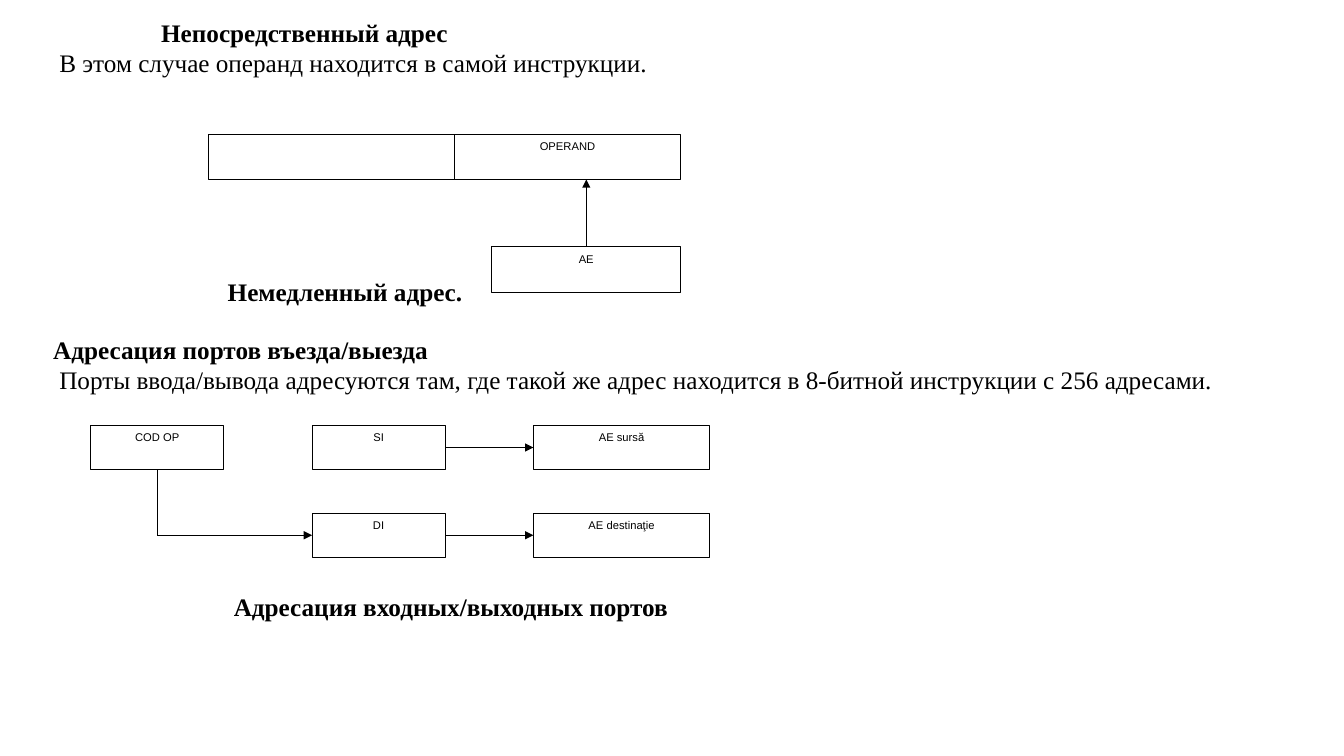
import pptx
import pptx.util
import pptx.dml.color
import pptx.enum.shapes
import pptx.enum.text
import pptx.oxml
import pptx.oxml.ns

Inches = pptx.util.Inches
ALIGN = pptx.enum.text.PP_ALIGN
BLACK = "000000"
WHITE = "FFFFFF"


def color(value):
    return pptx.dml.color.RGBColor.from_string(value)


def format_paragraph(para, size, font, bold, align):
    para.alignment = align
    for span in para.runs:
        span.font.size = pptx.util.Pt(size)
        span.font.name = font
        span.font.bold = bold
        span.font.color.rgb = color(BLACK)


def add_text(page, left, top, width, height, lines, wrap=True):
    box = page.shapes.add_textbox(Inches(left), Inches(top), Inches(width), Inches(height))
    frame = box.text_frame
    frame.word_wrap = wrap
    frame.auto_size = pptx.enum.text.MSO_AUTO_SIZE.SHAPE_TO_FIT_TEXT
    frame.text = "\n".join(text for text, bold, margin, indent in lines)
    for para, (text, bold, margin, indent) in zip(frame.paragraphs, lines):
        properties = para._p.get_or_add_pPr()
        properties.set("marL", str(Inches(margin)))
        properties.set("indent", str(Inches(indent)))
        format_paragraph(para, 18, "Times New Roman", bold, ALIGN.JUSTIFY if wrap else ALIGN.LEFT)


def add_cell(page, left, top, width, height, label=""):
    cell = page.shapes.add_shape(pptx.enum.shapes.MSO_SHAPE.RECTANGLE,
                                 Inches(left), Inches(top), Inches(width), Inches(height))
    cell.shadow.inherit = False
    cell.fill.solid()
    cell.fill.fore_color.rgb = color(WHITE)
    cell.line.color.rgb = color(BLACK)
    cell.line.width = pptx.util.Pt(0.75)
    cell.text_frame.vertical_anchor = pptx.enum.text.MSO_ANCHOR.TOP
    cell.text_frame.text = label
    format_paragraph(cell.text_frame.paragraphs[0], 8, "Arial", False, ALIGN.CENTER)
    return cell


def add_line(page, start, end, source=None, target=None, arrow=True):
    line = page.shapes.add_connector(pptx.enum.shapes.MSO_CONNECTOR.STRAIGHT,
                                     *(Inches(value) for value in start + end))
    if source:
        line.begin_connect(*source)
    if target:
        line.end_connect(*target)
    line.line.color.rgb = color(BLACK)
    line.line.width = pptx.util.Pt(0.75)
    if arrow:
        tail = pptx.oxml.parse_xml(f'<a:tailEnd {pptx.oxml.ns.nsdecls("a")} type="triangle"/>')
        line.line._get_or_add_ln().append(tail)
    line._element.spPr.append(pptx.oxml.parse_xml(f'<a:effectLst {pptx.oxml.ns.nsdecls("a")}/>'))


def immediate_diagram(page, left, top, width, height):
    cell_height = 0.45
    code_width, address_width = 2.44, 1.87
    right, bottom = left + width, top + height
    address_top = bottom - cell_height
    add_cell(page, left, top, code_width, cell_height)
    add_cell(page, left + code_width, top, width - code_width, cell_height, "OPERAND")
    address = add_cell(page, right - address_width, address_top, address_width, cell_height, "AE")
    middle = right - address_width / 2
    add_line(page, (middle, address_top), (middle, top + cell_height), source=(address, 0))


def port_diagram(page, left, top, width, height):
    cell_width, cell_height, target_width = 1.32, 0.44, 1.75
    target_left = left + width - target_width
    register_left = (left + target_left) / 2
    code = add_cell(page, left, top, cell_width, cell_height, "COD OP")
    rows = [("SI", "AE sursă"), ("DI", "AE destinaţie")]
    for index, (register_label, target_label) in enumerate(rows):
        row_top = top + index * (height - cell_height)
        row_middle = row_top + cell_height / 2
        register = add_cell(page, register_left, row_top, cell_width, cell_height, register_label)
        target = add_cell(page, target_left, row_top, target_width, cell_height, target_label)
        add_line(page, (register_left + cell_width, row_middle), (target_left, row_middle),
                 (register, 3), (target, 1))
    corner = (left + cell_width / 2, row_middle)
    add_line(page, (corner[0], top + cell_height), corner, source=(code, 2), arrow=False)
    add_line(page, corner, (register_left, row_middle), target=(register, 1))


def immediate_section(page, left, top):
    add_text(page, left, top, 9.69, 0.71, [
        ("Непосредственный адрес", True, 1.5, 0),
        ("В этом случае операнд находится в самой инструкции.", False, 0, 0.49),
    ])
    immediate_diagram(page, left + 2.07, top + 1.21, 4.68, 1.57)
    add_text(page, left + 2.16, top + 2.57, 2.55, 0.4, [("Немедленный адрес.", True, 0, 0)], wrap=False)


def port_section(page, left, top):
    add_text(page, left + 0.43, top, 4.46, 0.4, [("Адресация портов въезда/выезда", True, 1.5, -1.5)])
    add_text(page, left, top + 0.3, 13.13, 0.4, [
        ("Порты ввода/вывода адресуются там, где такой же адрес находится "
         "в 8-битной инструкции с 256 адресами.", False, 0, 0.49),
    ])
    port_diagram(page, left + 0.9, top + 0.95, 6.14, 1.31)
    add_text(page, left + 2.22, top + 2.55, 4.55, 0.4,
             [("Адресация входных/выходных портов", True, 0, 0)], wrap=False)


def main():
    deck = pptx.Presentation()
    deck.slide_width = Inches(13.33)
    deck.slide_height = Inches(7.5)
    page = deck.slides.add_slide(deck.slide_layouts[6])
    page.background.fill.solid()
    page.background.fill.fore_color.rgb = color(WHITE)
    immediate_section(page, 0, 0.12)
    port_section(page, 0, 3.27)
    deck.save("out.pptx")


if __name__ == "__main__":
    main()
